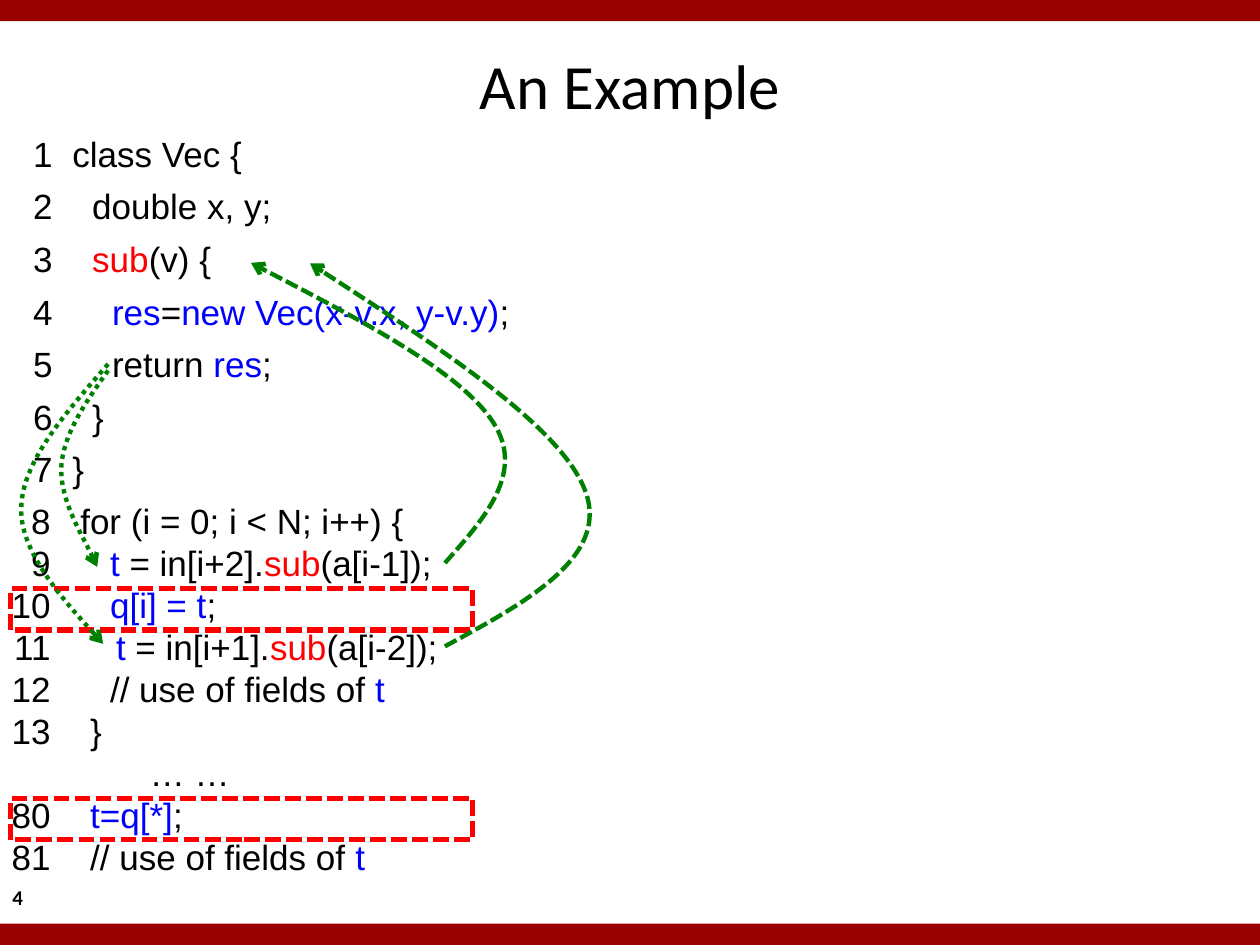
from dataclasses import dataclass

from lxml import etree
from pptx import Presentation
from pptx.dml.color import RGBColor
from pptx.enum.dml import MSO_LINE
from pptx.enum.shapes import MSO_SHAPE
from pptx.enum.text import MSO_ANCHOR, PP_ALIGN
from pptx.oxml.ns import qn
from pptx.util import Cm, Pt

RECT = MSO_SHAPE.RECTANGLE
DOT, DASH = MSO_LINE.ROUND_DOT, MSO_LINE.SQUARE_DOT
LEFT, MID, RIGHT = PP_ALIGN.LEFT, PP_ALIGN.CENTER, PP_ALIGN.RIGHT
CENTER = MSO_ANCHOR.MIDDLE


@dataclass(frozen=True)
class Theme:
    """Colours, fonts and type sizes of the slide."""
    ink: RGBColor = RGBColor(0, 0, 0)
    bar: RGBColor = RGBColor(0x99, 0, 0)
    red: RGBColor = RGBColor(0xFF, 0, 0)
    blue: RGBColor = RGBColor(0, 0, 0xFF)
    green: RGBColor = RGBColor(0, 0x80, 0)
    head: str = "Calibri"
    code: str = "Arial"
    big: Pt = Pt(36)
    body: Pt = Pt(20)
    small: Pt = Pt(12)
    pitch: Pt = Pt(24)
    frame: Pt = Pt(3)
    curve: Pt = Pt(2.5)


LOOK = Theme()
WIDE, HIGH = 25.4, 19.05
SPACE, NUMS = 0.2, 0.9

SUB, RES, T = ("sub", LOOK.red), ("res", LOOK.blue), ("t", LOOK.blue)
METHOD = [
    ("1", 2, ["class Vec {"]),
    ("2", 4, ["double x, y;"]),
    ("3", 4, [SUB, "(v) {"]),
    ("4", 6, [RES, "=", ("new Vec(x-v.x, y-v.y)", LOOK.blue), ";"]),
    ("5", 6, ["return ", RES, ";"]),
    ("6", 4, ["}"]),
    ("7", 2, ["}"]),
]
LOOP = [
    ("8", 3, ["for (i = 0; i < N; i++) {"]),
    ("9", 6, [T, " = in[i+2].", SUB, "(a[i-1]);"]),
    ("10", 6, [("q[i] = t", LOOK.blue), ";"]),
    ("11", 6.6, [T, " = in[i+1].", SUB, "(a[i-2]);"]),
    ("12", 6, ["// use of fields of ", T]),
    ("13", 4, ["}"]),
    ("", 10, ["… …"]),
]
TAIL = [
    ("80", 4, [("t=q[*]", LOOK.blue), ";"]),
    ("81", 4, ["// use of fields of ", T]),
]
FLOWS = [
    (2.18, 7.47, DOT, [[(-0.43, 0.61), (-0.88, 1.24), (-0.94, 1.9)],
                       [(-0.99, 2.56), (-0.35, 3.63), (-0.22, 3.96)]]),
    (2.18, 7.34, DOT, [[(-0.86, 0.99), (-1.75, 1.98), (-1.75, 2.92)],
                       [(-1.78, 3.86), (-0.1, 5.64), (-0.1, 5.64)]]),
    (8.97, 11.35, DASH, [[(0.81, -0.91), (1.63, -1.83), (0.97, -2.84)],
                         [(0.3, -3.86), (-1.8, -4.95), (-3.91, -6.05)]]),
    (8.97, 13.03, DASH, [[(1.65, -0.89), (3.3, -1.8), (2.84, -3.1)],
                         [(2.39, -4.39), (-0.15, -6.05), (-2.72, -7.72)]]),
]


def style(para, name, size, align=LEFT, bold=False):
    """Set the font and alignment of a paragraph."""
    font = para.font
    font.name, font.size, font.bold = name, size, bold
    font.color.rgb = LOOK.ink
    para.alignment = align


def title(slide, box, text):
    """Place the title in its box."""
    shape = slide.shapes.title
    shape.left, shape.top, shape.width, shape.height = map(Cm, box)
    frame = shape.text_frame
    frame.text = text
    frame.vertical_anchor = CENTER
    style(frame.paragraphs[0], LOOK.head, LOOK.big, MID)


def bar(slide, box):
    """Draw a solid band across the box."""
    shape = slide.shapes.add_shape(RECT, *map(Cm, box))
    shape.shadow.inherit = False
    shape.fill.solid()
    shape.fill.fore_color.rgb = LOOK.bar
    shape.line.fill.background()


def page(slide, box, text):
    """Write the page number in the box."""
    frame = slide.shapes.add_textbox(*map(Cm, box)).text_frame
    frame.word_wrap = True
    frame.vertical_anchor = CENTER
    frame.text = text
    style(frame.paragraphs[0], LOOK.head, LOOK.small, bold=True)


def column(slide, box, rows, gap, align):
    """Write rows of indent and runs as paragraphs in the box."""
    frame = slide.shapes.add_textbox(*map(Cm, box)).text_frame
    frame.word_wrap = True
    frame.margin_left = frame.margin_right = 0
    frame.margin_top = frame.margin_bottom = 0
    for i, (dent, parts) in enumerate(rows):
        para = frame.add_paragraph() if i else frame.paragraphs[0]
        style(para, LOOK.code, LOOK.body, align)
        para.line_spacing, para.space_after = LOOK.pitch, Pt(gap)
        props = para._p.get_or_add_pPr()
        props.set("marL", str(Cm(dent * SPACE)))
        props.set("indent", "0")
        for part in parts:
            text, tint = (part, LOOK.ink) if isinstance(part, str) else part
            run = para.add_run()
            run.text = text
            run.font.color.rgb = tint


def listing(slide, box, lines, gap=0):
    """Set line numbers and code side by side in the box."""
    x, y, w, h = box
    nums = [(0, [num]) for num, _, _ in lines if num]
    code = [(dent, parts) for _, dent, parts in lines]
    column(slide, (x, y, NUMS, h), nums, gap, RIGHT)
    column(slide, (x + NUMS, y, w - NUMS, h), code, gap, LEFT)


def frame(slide, box):
    """Outline the box with red dashes."""
    shape = slide.shapes.add_shape(RECT, *map(Cm, box))
    shape.shadow.inherit = False
    shape.fill.background()
    shape.line.color.rgb = LOOK.red
    shape.line.width, shape.line.dash_style = LOOK.frame, DASH


def flow(slide, x, y, dash, arcs):
    """Draw a curved arrow from a start point through its arcs."""
    spots = [[(Cm(x + dx), Cm(y + dy)) for dx, dy in arc] for arc in arcs]
    pen = slide.shapes.build_freeform(Cm(x), Cm(y))
    pen.add_line_segments([arc[-1] for arc in spots], close=False)
    shape = pen.convert_to_shape()
    shape.shadow.inherit = False
    shape.fill.background()
    line = shape.line
    line.color.rgb, line.width, line.dash_style = LOOK.green, LOOK.curve, dash
    for leg, arc in zip(list(shape._element.iter(qn("a:lnTo"))), spots):
        bend = etree.Element(qn("a:cubicBezTo"))
        for px, py in arc:
            etree.SubElement(bend, qn("a:pt"), x=str(px - shape.left),
                             y=str(py - shape.top))
        leg.getparent().replace(leg, bend)
    etree.SubElement(line._get_or_add_ln(), qn("a:tailEnd"), type="arrow")


def main():
    """Build the slide and save it."""
    deck = Presentation()
    deck.slide_width, deck.slide_height = Cm(WIDE), Cm(HIGH)
    slide = deck.slides.add_slide(deck.slide_layouts[5])
    for y in (0, HIGH - 0.43):
        bar(slide, (0, y, WIDE, 0.43))
    title(slide, (1.27, 0.64, 22.86, 2.11), "An Example")
    listing(slide, (0.16, 2.67, 10.7, 7.4), METHOD, 6)
    page(slide, (0, 17.58, 1.07, 1.02), "4")
    listing(slide, (0.12, 10.07, 10.3, 5.93), LOOP)
    listing(slide, (0.12, 16, 10.3, 1.69), TAIL)
    for y in (11.87, 16.1):
        frame(slide, (0.21, y, 9.32, 0.83))
    for item in FLOWS:
        flow(slide, *item)
    deck.save("out.pptx")


if __name__ == "__main__":
    main()
